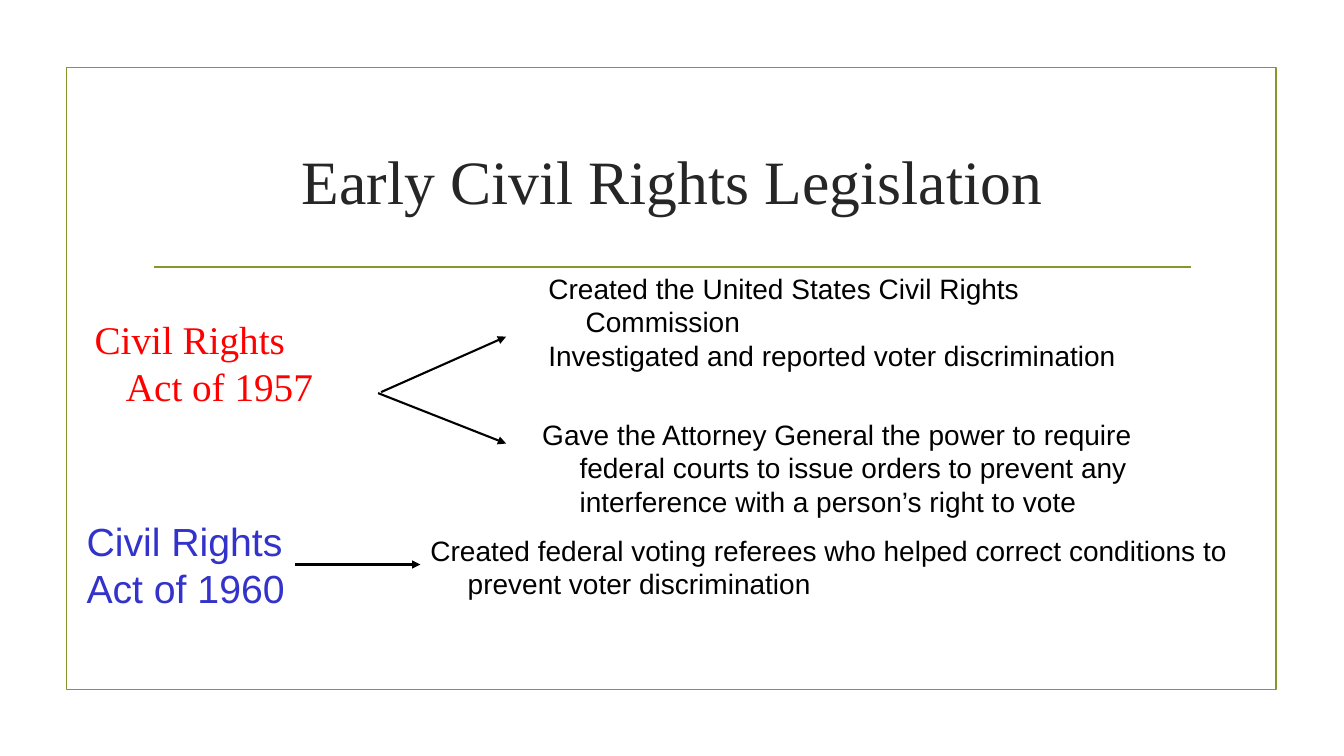
"""Build a slide on the Civil Rights Acts of 1957 and 1960."""
from pptx import Presentation
from pptx.dml.color import RGBColor
from pptx.enum.shapes import MSO_CONNECTOR, MSO_SHAPE
from pptx.enum.text import MSO_ANCHOR, PP_ALIGN
from pptx.oxml.ns import qn
from pptx.util import Inches, Pt
from lxml import etree

STRAIGHT = MSO_CONNECTOR.STRAIGHT
RECTANGLE = MSO_SHAPE.RECTANGLE
TOP, MIDDLE = MSO_ANCHOR.TOP, MSO_ANCHOR.MIDDLE
LEFT, CENTER = PP_ALIGN.LEFT, PP_ALIGN.CENTER

THEME = {
    "serif": "Times New Roman", "sans": "Arial",
    "green": "83992A", "title": "262626", "red": "FF0000", "blue": "3333CC", "black": "000000",
    "title_size": 44, "act_size": 28, "effect_size": 20,
    "rule_width": 1.25, "arrow_width": 1.5,
}

FRAME = (0.66, 0.67, 12, 6.17)
TITLE_RULE = (1.53, 2.65, 11.81, 2.65)
TITLE = ("Early Civil Rights Legislation", (1.42, 1.07, 10.5, 1.43))
ACTS = [
    ("Civil Rights Act of 1957", (0.84, 3.08, 2.71, 1.19), "serif", "red", 0.31),
    ("Civil Rights Act of 1960", (0.76, 5.08, 2.42, 1.04), "sans", "blue", 0),
]
EFFECTS = [
    (["Created the United States Civil Rights Commission",
      "Investigated and reported voter discrimination"], (5.34, 2.64, 6.35, 0.93)),
    (["Gave the Attorney General the power to require federal courts to issue orders "
      "to prevent any interference with a person’s right to vote"], (5.28, 4.09, 6.63, 0.98)),
    (["Created federal voting referees who helped correct conditions to prevent "
      "voter discrimination"], (4.17, 5.24, 8.42, 0.98)),
]
EFFECT_INDENT = 0.37
ARROWS = [(2.93, 5.6, 4.17, 5.6), (3.78, 3.89, 5.02, 3.34), (3.75, 3.9, 5.02, 4.4)]


def color(name):
    return RGBColor.from_string(THEME[name])


def add_text(slide, lines, box, font, size, ink, indent=0, anchor=TOP, align=LEFT):
    frame = slide.shapes.add_textbox(*map(Inches, box)).text_frame
    frame.word_wrap = True
    frame.vertical_anchor = anchor
    for index, line in enumerate(lines):
        paragraph = frame.add_paragraph() if index else frame.paragraphs[0]
        paragraph.alignment = align
        if indent:
            properties = paragraph._p.get_or_add_pPr()
            properties.set("marL", str(Inches(indent)))
            properties.set("indent", str(-Inches(indent)))
        run = paragraph.add_run()
        run.text = line
        run.font.name = THEME[font]
        run.font.size = Pt(THEME[size])
        run.font.color.rgb = color(ink)


def add_line(slide, ends, ink, width, arrow=False):
    connector = slide.shapes.add_connector(STRAIGHT, *map(Inches, ends))
    connector.line.color.rgb = color(ink)
    connector.line.width = Pt(THEME[width])
    if arrow:
        etree.SubElement(connector.line._get_or_add_ln(), qn("a:tailEnd"), type="triangle")
    etree.SubElement(connector._element.spPr, qn("a:effectLst"))


def main():
    presentation = Presentation()
    presentation.slide_width = Inches(13.33)
    presentation.slide_height = Inches(7.5)
    slide = presentation.slides.add_slide(presentation.slide_layouts[6])

    border = slide.shapes.add_shape(RECTANGLE, *map(Inches, FRAME))
    border.shadow.inherit = False
    border.fill.background()
    border.line.color.rgb = color("green")
    border.line.width = Pt(THEME["rule_width"])
    add_line(slide, TITLE_RULE, "green", "rule_width")

    title, title_box = TITLE
    add_text(slide, [title], title_box, "serif", "title_size", "title", anchor=MIDDLE, align=CENTER)
    for act, box, font, ink, indent in ACTS:
        add_text(slide, [act], box, font, "act_size", ink, indent)
    for ends in ARROWS:
        add_line(slide, ends, "black", "arrow_width", arrow=True)
    for lines, box in EFFECTS:
        add_text(slide, lines, box, "sans", "effect_size", "black", EFFECT_INDENT)

    presentation.save("out.pptx")


if __name__ == "__main__":
    main()
